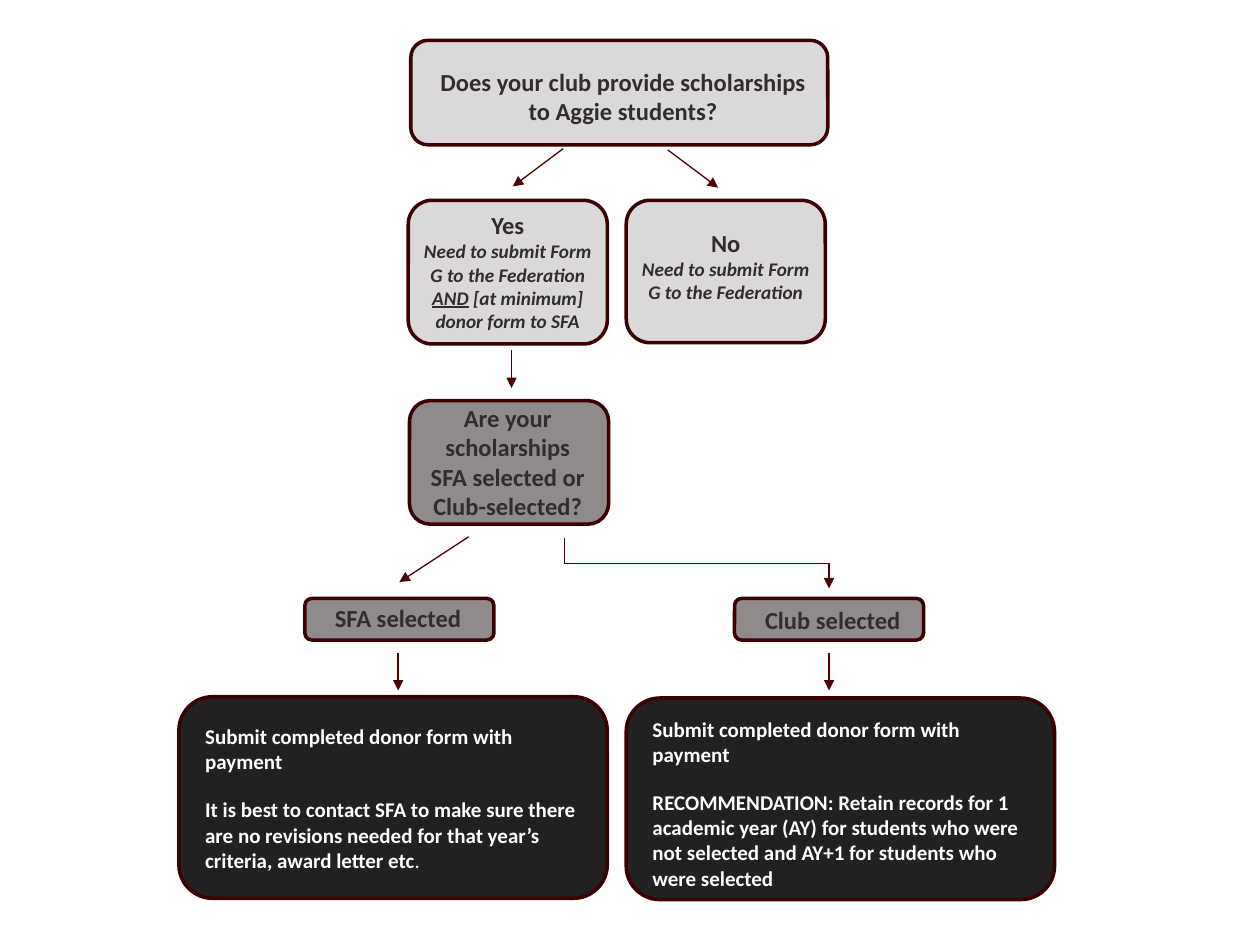
from pptx import Presentation
from pptx.dml.color import RGBColor
from pptx.enum.shapes import MSO_CONNECTOR as Link, MSO_SHAPE as Shape
from pptx.enum.text import MSO_ANCHOR as Anchor, PP_ALIGN as Align
from pptx.oxml.ns import qn
from pptx.util import Emu, Pt
from lxml import etree

PX = 9144  # EMU in one px, 100 px to the inch
INK, EDGE, WIRE = "332C2C", "3B0000", "4E0000"
PALE, GREY, DARK, WHITE = "DAD8D8", "918A8A", "222020", "FFFFFF"
HEAD = {"size": Pt(14), "bold": True}
NOTE = {"size": Pt(11), "bold": True, "italic": True}
BODY = {"size": Pt(12), "bold": True}


def px(*nums):
    return [Emu(n * PX) for n in nums]


def rgb(code):
    return RGBColor.from_string(code)


def style(item, look):
    for key, value in look.items():
        setattr(item, key, value)


def box(slide, area, fill):
    """Rounded box with the dark red edge."""
    shape = slide.shapes.add_shape(Shape.ROUNDED_RECTANGLE, *px(*area))
    shape.shadow.inherit = False
    shape.fill.solid()
    shape.fill.fore_color.rgb = rgb(fill)
    shape.line.color.rgb = rgb(EDGE)
    shape.line.width = Pt(2)


def write(shape, paras, color=INK, align=Align.CENTER, anchor=Anchor.TOP):
    """Each paragraph is a list of (text, look) runs."""
    frame = shape.text_frame
    style(frame, {"word_wrap": True, "vertical_anchor": anchor})
    for i, runs in enumerate(paras):
        para = frame.add_paragraph() if i else frame.paragraphs[0]
        style(para, {"alignment": align, "space_before": Pt(13 if i else 0)})
        for text, look in runs:
            if text == "\n":
                para.add_line_break()
                continue
            run = para.add_run()
            run.text = text
            style(run.font, {"name": "Calibri", **look})
            run.font.color.rgb = rgb(color)


def label(slide, area, paras, **opts):
    write(slide.shapes.add_textbox(*px(*area)), paras, **opts)


def arrow(slide, ends, kind=Link.STRAIGHT):
    wire = slide.shapes.add_connector(kind, *px(*ends))
    wire.line.color.rgb = rgb(WIRE)
    wire.line.width = Pt(0.75)
    etree.SubElement(wire.line._get_or_add_ln(), qn("a:tailEnd"), type="triangle")
    etree.SubElement(wire._element.spPr, qn("a:effectLst"))
    return wire


def bend(slide, x1, y1, x2, y2):
    """Elbow arrow that leaves and arrives vertically: a quarter turn."""
    mid, level = (x1 + x2) // 2, (y1 + y2) // 2
    dx, dy = (x2 - x1) // 2, (y2 - y1) // 2
    ends = mid + dy, level - dx, mid - dy, level + dx
    wire = arrow(slide, ends, Link.ELBOW)
    wire._element.spPr.find(qn("a:xfrm")).set("rot", str(270 * 60000))


def main():
    deck = Presentation()
    deck.slide_width, deck.slide_height = px(1000, 750)
    slide = deck.slides.add_slide(deck.slide_layouts[5])

    # Opening question, in front of its box
    box(slide, (326, 32, 331, 83), PALE)
    title = slide.shapes.title
    slide.shapes._spTree.append(title._element)
    spot = px(331, 35, 327, 83)
    style(title, dict(zip(("left", "top", "width", "height"), spot)))
    ask = "Does your club provide scholarships to Aggie students?"
    write(title, [[(ask, HEAD)]], anchor=Anchor.MIDDLE)

    # Yes and No
    form = "Need to submit Form G to the Federation"
    box(slide, (497, 159, 158, 113), PALE)
    label(slide, (497, 176, 158, 67), [[("No", HEAD), ("\n", {}), (form, NOTE)]])
    box(slide, (324, 159, 158, 114), PALE)
    label(slide, (324, 162, 158, 103), [[
        ("Yes", HEAD), ("\n", {}), (form + " ", NOTE),
        ("AND", {**NOTE, "underline": True}),
        (" [at minimum] donor form to SFA", NOTE)]])

    # Second question
    box(slide, (325, 318, 158, 98), GREY)
    ask = "Are your scholarships SFA selected or Club-selected?"
    label(slide, (330, 315, 146, 100), [[(ask, HEAD)]])

    # Who selects
    for left, shift, top, name in ((583, 5, 475, "Club selected"),
                                   (242, 1, 474, "SFA selected")):
        box(slide, (left, 475, 150, 33), GREY)
        label(slide, (left + shift, top, 146, 46), [[(name, HEAD)]])

    # What to do
    submit = [("Submit completed donor form with payment", BODY)]
    keep = ("RECOMMENDATION: Retain records for 1 academic year (AY) for students "
            "who were not selected and AY+1 for students who were selected")
    check = ("It is best to contact SFA to make sure there are no revisions needed "
             "for that year’s criteria, award letter etc")
    steps = (((497, 554, 340, 160), (508, 567, 315, 141), [(keep, BODY)]),
             ((142, 553, 340, 160), (153, 560, 329, 147),
              [(check, BODY), (".", {**BODY, "bold": False})]))
    for frame, area, advice in steps:
        box(slide, frame, DARK)
        label(slide, area, [submit, advice], color=WHITE, align=Align.LEFT,
              anchor=Anchor.MIDDLE)

    # Arrows
    for ends in ((530, 119, 570, 149), (447, 118, 407, 148), (406, 278, 406, 308),
                 (372, 426, 317, 462), (316, 518, 316, 548), (658, 518, 658, 548)):
        arrow(slide, ends)
    bend(slide, 448, 427, 658, 467)

    deck.save("out.pptx")


if __name__ == "__main__":
    main()
